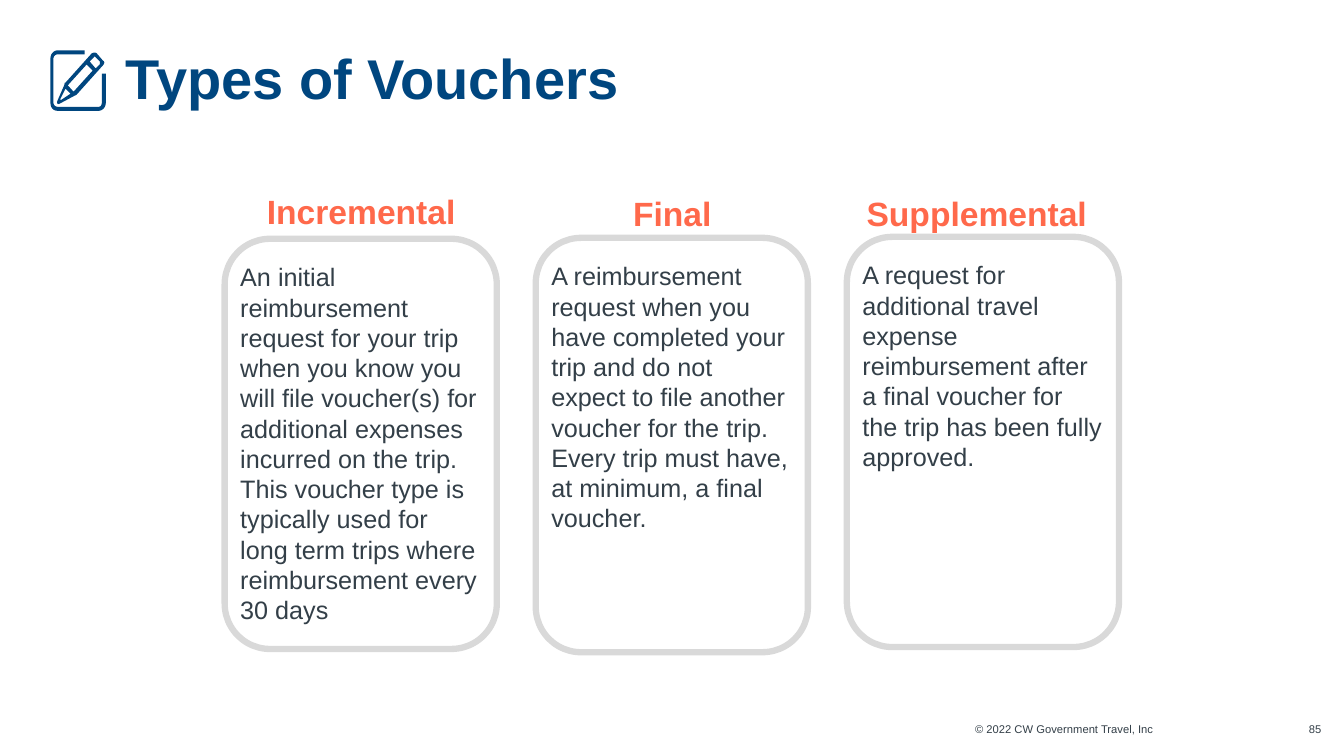
import dataclasses

import pptx
import pptx.dml.color
import pptx.enum.shapes
import pptx.enum.text
import pptx.util

Pt = pptx.util.Pt
RGB = pptx.dml.color.RGBColor
ALIGN = pptx.enum.text.PP_ALIGN
ANCHOR = pptx.enum.text.MSO_ANCHOR
AUTO = pptx.enum.text.MSO_AUTO_SIZE


@dataclasses.dataclass(frozen=True)
class Theme:
    font: str = "Arial"
    navy: RGB = RGB(0x00, 0x46, 0x7F)
    coral: RGB = RGB(0xFF, 0x69, 0x4B)
    slate: RGB = RGB(0x33, 0x3F, 0x48)
    border: RGB = RGB(0xD9, 0xD9, 0xD9)
    title_size: int = 40
    heading_size: int = 24
    body_size: int = 18
    footer_size: int = 8


THEME = Theme()

ICON_UNIT = 0.72
CURVE_STEPS = 6
PENCIL_ICON = [
    [(101, 73), (101, 102), (101, 104, 100, 106, 98, 106), (57, 106),
     (55, 106, 53, 104, 53, 102), (53, 58), (53, 56, 55, 54, 57, 54),
     (84, 54), (84, 50), (57, 50), (53, 50, 50, 54, 50, 58), (50, 102),
     (50, 107, 53, 110, 57, 110), (98, 110), (101, 110, 105, 107, 105, 102),
     (105, 73)],
    [(64, 84), (57, 100), (56, 102, 57, 104, 59, 103), (74, 95),
     (75, 95, 75, 94, 76, 94), (102, 65), (104, 63, 104, 61, 102, 60),
     (96, 53), (95, 52, 93, 52, 91, 53), (65, 82), (64, 82, 64, 83, 64, 84)],
    [(93, 57), (93, 56, 94, 56, 95, 57), (99, 61),
     (99, 62, 99, 63, 99, 64), (95, 68), (89, 61)],
    [(86, 64), (92, 70), (73, 91), (71, 89, 68, 85, 67, 85)],
    [(70, 93), (61, 99), (60, 100, 60, 99, 60, 98), (65, 88)],
]

CARD_LEFT, CARD_PITCH, CARD_WIDTH = 160.5, 222.2, 194.4
HEADING_WIDTH, HEADING_HEIGHT = 177, 36
BODY_INSET, BODY_DROP, BODY_WIDTH = 4, 12.8, 186.5
CARDS = [
    ("Incremental", 9, 132.5, 170.6, 293, 269.3,
     "An initial reimbursement request for your trip when you know you will "
     "file voucher(s) for additional expenses incurred on the trip. This "
     "voucher type is typically used for long term trips where "
     "reimbursement every 30 days"),
    ("Final", 9, 134.6, 169.9, 296, 203.8,
     "A reimbursement request when you have completed your trip and do not "
     "expect to file another voucher for the trip. Every trip must have, at "
     "minimum, a final voucher."),
    ("Supplemental", 4.3, 133.9, 169.2, 293, 159.8,
     "A request for additional travel expense reimbursement after a final "
     "voucher for the trip has been fully approved."),
]


def format_text(tf, text, size, color, bold=False, align=ALIGN.LEFT):
    tf.text = text
    tf.word_wrap = True
    tf.auto_size = AUTO.NONE
    tf.vertical_anchor = ANCHOR.TOP
    p = tf.paragraphs[0]
    p.alignment = align
    font = p.runs[0].font
    font.name = THEME.font
    font.size = Pt(size)
    font.bold = bold
    font.color.rgb = color


def clear_margins(tf):
    tf.margin_left = tf.margin_right = tf.margin_top = tf.margin_bottom = 0


def add_text(s, box, text, size, color, **style):
    tf = s.shapes.add_textbox(*map(Pt, box)).text_frame
    format_text(tf, text, size, color, **style)
    return tf


def set_title(s, text):
    title = s.shapes.title
    title.left, title.top, title.width, title.height = map(Pt, (90, 38.2, 830, 66))
    tf = title.text_frame
    format_text(tf, text, THEME.title_size, THEME.navy, bold=True)
    clear_margins(tf)
    tf.paragraphs[0].line_spacing = 0.85


def flatten(contour):
    points = [contour[0]]
    for step in contour[1:]:
        if len(step) == 2:
            points.append(step)
            continue
        x0, y0 = points[-1]
        x1, y1, x2, y2, x3, y3 = step
        for i in range(1, CURVE_STEPS + 1):
            t = i / CURVE_STEPS
            a, b, c, d = (1 - t) ** 3, 3 * t * (1 - t) ** 2, 3 * t * t * (1 - t), t ** 3
            points.append((a * x0 + b * x1 + c * x2 + d * x3,
                           a * y0 + b * y1 + c * y2 + d * y3))
    return [(Pt(x * ICON_UNIT), Pt(y * ICON_UNIT)) for x, y in points]


def add_icon(s, contours, color):
    outlines = [flatten(contour) for contour in contours]
    builder = s.shapes.build_freeform(*outlines[0][0])
    for i, points in enumerate(outlines):
        if i:
            builder.move_to(*points[0])
        builder.add_line_segments(points[1:], close=True)
    sp = builder.convert_to_shape()
    sp.shadow.inherit = False
    sp.fill.solid()
    sp.fill.fore_color.rgb = color
    sp.line.fill.background()


def add_card(s, left, heading, heading_inset, heading_top, top, height, body_height, body):
    sp = s.shapes.add_shape(pptx.enum.shapes.MSO_SHAPE.ROUNDED_RECTANGLE,
                            Pt(left), Pt(top), Pt(CARD_WIDTH), Pt(height))
    sp.shadow.inherit = False
    sp.fill.background()
    sp.line.color.rgb = THEME.border
    sp.line.width = Pt(4.5)
    add_text(s, (left + heading_inset, heading_top, HEADING_WIDTH, HEADING_HEIGHT),
             heading, THEME.heading_size, THEME.coral, bold=True, align=ALIGN.CENTER)
    add_text(s, (left + BODY_INSET, top + BODY_DROP, BODY_WIDTH, body_height),
             body, THEME.body_size, THEME.slate)


def add_footer(s, left, width, text):
    tf = add_text(s, (left, 516.2, width, 10), text,
                  THEME.footer_size, THEME.slate, align=ALIGN.RIGHT)
    clear_margins(tf)


def main():
    prs = pptx.Presentation()
    prs.slide_width, prs.slide_height = Pt(960), Pt(540)
    s = prs.slides.add_slide(prs.slide_layouts[5])
    add_icon(s, PENCIL_ICON, THEME.navy)
    set_title(s, "Types of Vouchers")
    add_footer(s, 603.4, 220.5, "© 2022 CW Government Travel, Inc")
    add_footer(s, 927.4, 16.5, "85")
    for i, card in enumerate(CARDS):
        add_card(s, CARD_LEFT + i * CARD_PITCH, *card)
    prs.save("out.pptx")


if __name__ == "__main__":
    main()
